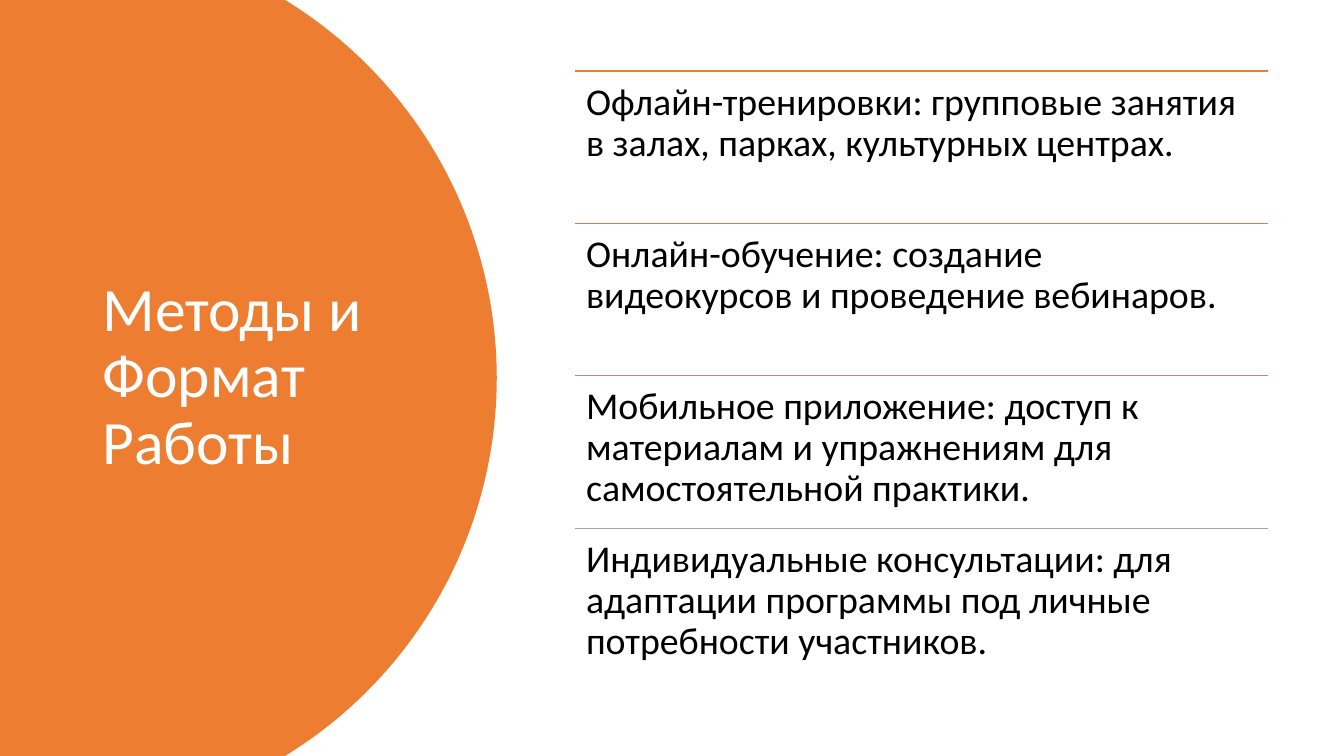
"""Build the slide on work methods and formats."""
import math

import pptx
import pptx.dml.color
import pptx.enum.shapes
import pptx.enum.text
import pptx.oxml.xmlchemy
import pptx.util
from lxml import etree
from pptx.util import Cm, Pt

HEADING = "Методы и Формат Работы"
METHODS = [
    ("Офлайн-тренировки: групповые занятия в залах, парках, культурных центрах.", "ED7D31"),
    ("Онлайн-обучение: создание видеокурсов и проведение вебинаров.", "D17B5C"),
    ("Мобильное приложение: доступ к материалам и упражнениям для самостоятельной практики.", "B98A82"),
    ("Индивидуальные консультации: для адаптации программы под личные потребности участников.", "A5A5A5"),
]
THEME = {
    "font": "Calibri",
    "panel": "ED7D31",
    "heading": "FFFFFF",
    "body": "000000",
    "heading_size": 44,
    "body_size": 27,
    "rule_width": 1,
}
SLIDE_WIDTH, SLIDE_HEIGHT = 33.87, 19.05
ARC_CENTER, ARC_RADIUS, ARC_STEPS = 1.35, 11.17, 120
HEADING_BOX = (2.33, 1.78, 8.2, 15.47)
LIST_LEFT, LIST_TOP, LIST_WIDTH, ROW_HEIGHT = 14.48, 1.79, 17.47, 3.84
INSET = 0.29
DRAWING_NS = "http://schemas.openxmlformats.org/drawingml/2006/main"


def rgb(value):
    """Return a colour object for a hex string."""
    return pptx.dml.color.RGBColor.from_string(value)


def write(frame, text, size, color):
    """Put one left-aligned run into a text frame."""
    frame.word_wrap = True
    frame.auto_size = pptx.enum.text.MSO_AUTO_SIZE.NONE
    paragraph = frame.paragraphs[0]
    paragraph.alignment = pptx.enum.text.PP_ALIGN.LEFT
    paragraph.line_spacing = 0.9
    run = paragraph.add_run()
    run.text = text
    run.font.name = THEME["font"]
    run.font.size = Pt(size)
    run.font.color.rgb = rgb(color)


def add_panel(slide):
    """Draw the round-edged panel behind the heading."""
    half_height = SLIDE_HEIGHT / 2
    half_angle = math.asin(half_height / ARC_RADIUS)
    angles = [half_angle * (2 * step / ARC_STEPS - 1) for step in range(ARC_STEPS + 1)]
    edge = [
        (Cm(ARC_CENTER + ARC_RADIUS * math.cos(angle)),
         Cm(half_height + ARC_RADIUS * math.sin(angle)))
        for angle in angles
    ]
    outline = slide.shapes.build_freeform(0, 0)
    outline.add_line_segments(edge + [(0, Cm(SLIDE_HEIGHT))], close=True)
    panel = outline.convert_to_shape()
    panel.shadow.inherit = False
    panel.fill.solid()
    panel.fill.fore_color.rgb = rgb(THEME["panel"])
    panel.line.fill.background()
    slide.shapes.title.element.addprevious(panel.element)


def add_heading(slide):
    """Place the title over the panel."""
    heading = slide.shapes.title
    heading.left, heading.top, heading.width, heading.height = map(Cm, HEADING_BOX)
    heading.text_frame.vertical_anchor = pptx.enum.text.MSO_ANCHOR.MIDDLE
    write(heading.text_frame, HEADING, THEME["heading_size"], THEME["heading"])


def add_method(slide, top, text, color):
    """Add one method under its coloured rule."""
    rule = slide.shapes.add_connector(
        pptx.enum.shapes.MSO_CONNECTOR.STRAIGHT,
        Cm(LIST_LEFT), Cm(top), Cm(LIST_LEFT + LIST_WIDTH), Cm(top),
    )
    rule.line.color.rgb = rgb(color)
    rule.line.width = Pt(THEME["rule_width"])
    etree.SubElement(rule.element.spPr, f"{{{DRAWING_NS}}}effectLst")
    method = slide.shapes.add_textbox(Cm(LIST_LEFT), Cm(top), Cm(LIST_WIDTH), Cm(ROW_HEIGHT))
    frame = method.text_frame
    frame.margin_left = frame.margin_right = Cm(INSET)
    frame.margin_top = frame.margin_bottom = Cm(INSET)
    write(frame, text, THEME["body_size"], THEME["body"])


def main():
    """Assemble and save the deck."""
    deck = pptx.Presentation()
    deck.slide_width, deck.slide_height = Cm(SLIDE_WIDTH), Cm(SLIDE_HEIGHT)
    slide = deck.slides.add_slide(deck.slide_layouts[5])
    add_panel(slide)
    add_heading(slide)
    for row, (text, color) in enumerate(METHODS):
        add_method(slide, LIST_TOP + row * ROW_HEIGHT, text, color)
    deck.save("out.pptx")


if __name__ == "__main__":
    main()
